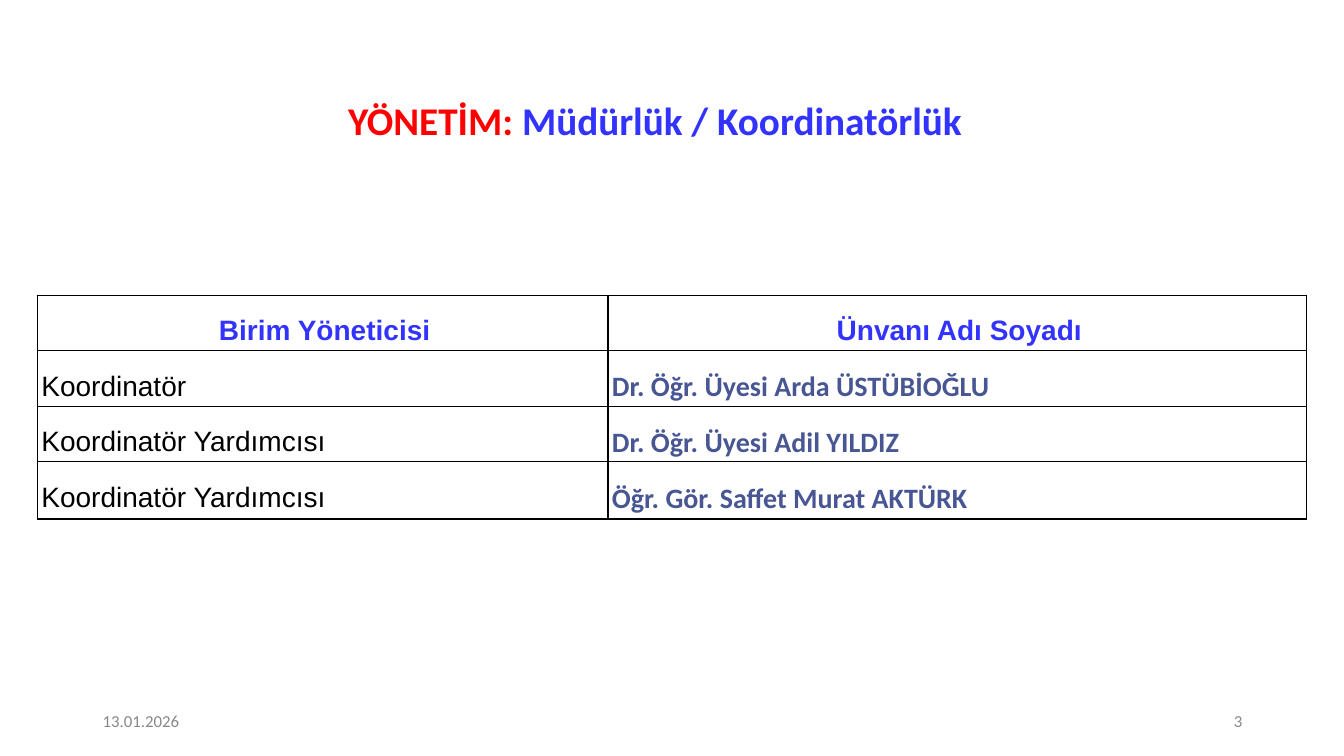
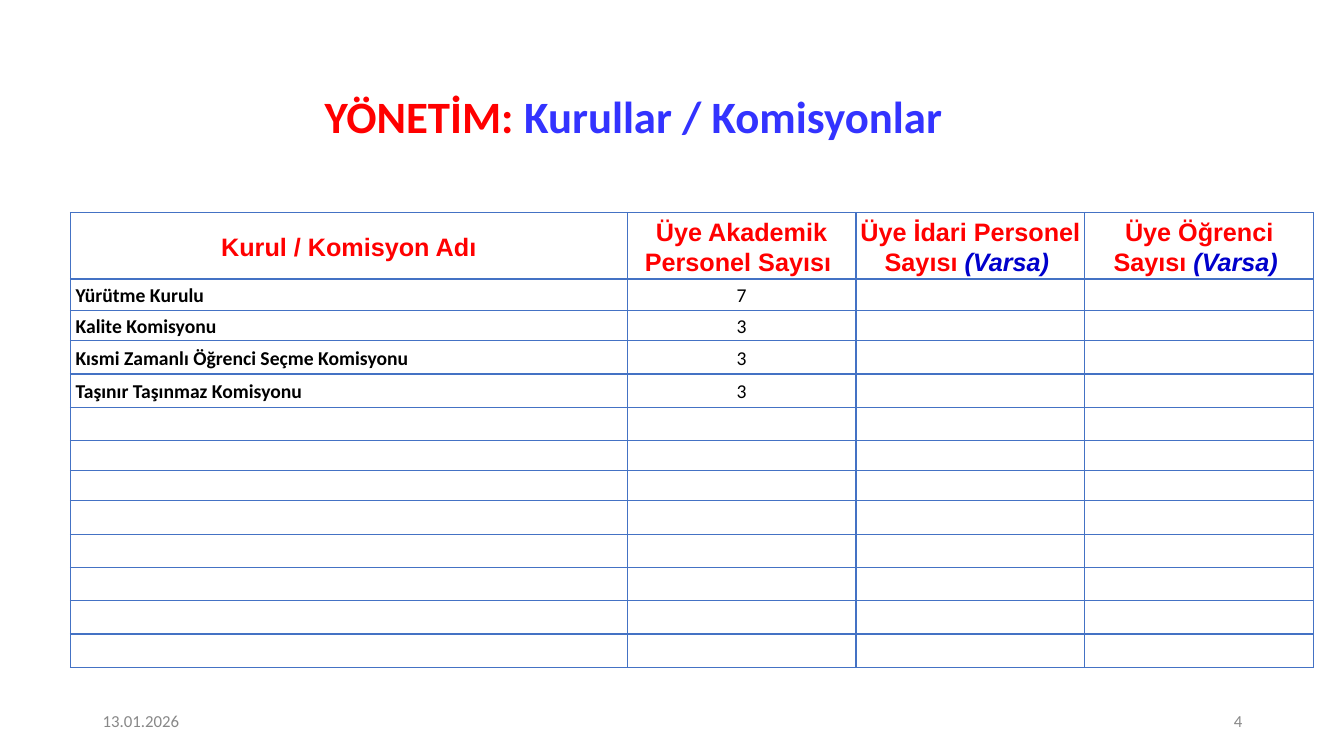
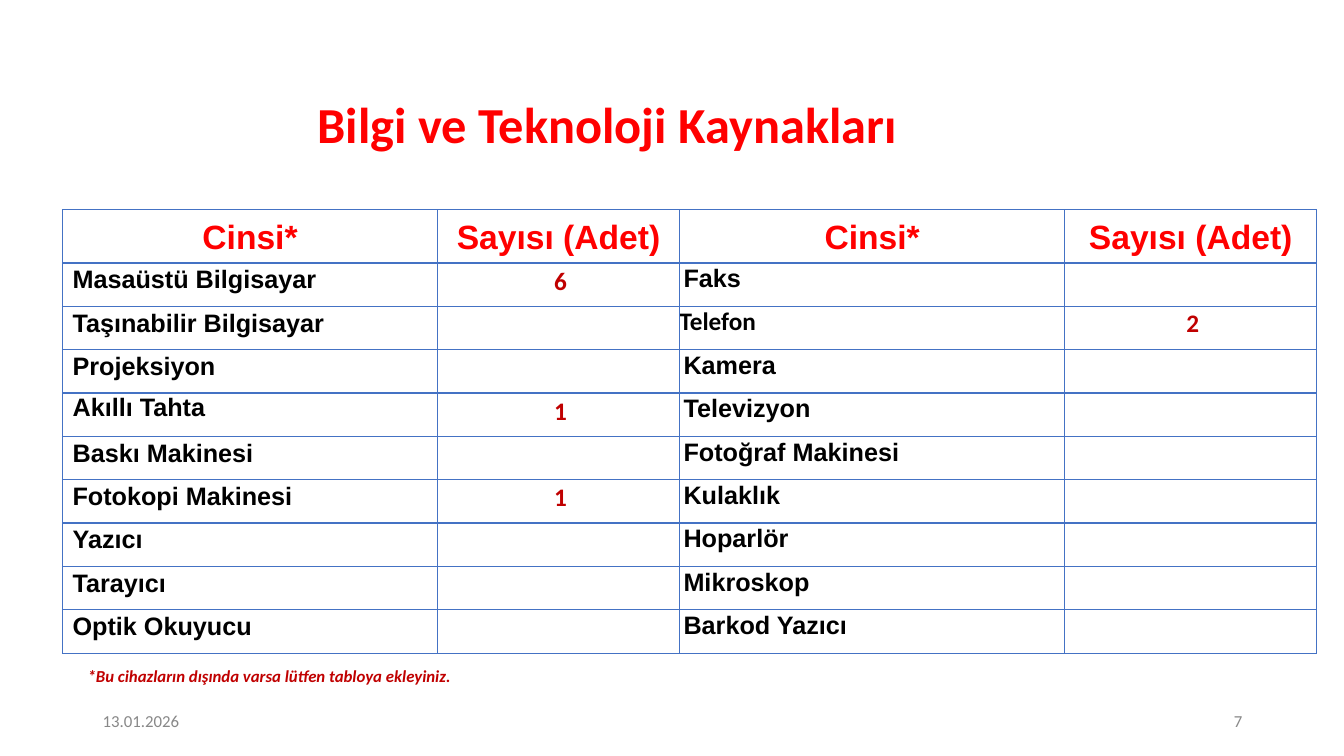
from itertools import product

from lxml import etree
from pptx import Presentation
from pptx.dml.color import RGBColor
from pptx.enum import text
from pptx.oxml import ns
from pptx.util import Emu, Pt

PX = 9144
COLOURS = {
    "red": "FF0000", "blue": "3333FF", "navy": "0000CC", "slate": "485793",
    "black": "000000", "grey": "888888", "crimson": "C00000", "line": "4472C4",
}
ALIGN = {"left": text.PP_ALIGN.LEFT, "center": text.PP_ALIGN.CENTER, "right": text.PP_ALIGN.RIGHT}
MIDDLE, TOP = text.MSO_ANCHOR.MIDDLE, text.MSO_ANCHOR.TOP
DATE = "13.01.2026"


def style(size, colour, font="Calibri", bold=False, italic=False, align="left",
          spacing=1.0, anchor=MIDDLE, inset=(10, 5, 10, 5)):
    return dict(size=size, colour=colour, font=font, bold=bold, italic=italic,
                align=align, spacing=spacing, anchor=anchor, inset=inset)


class Deck:
    def __init__(self, width, height):
        self.file = Presentation()
        self.file.slide_width, self.file.slide_height = Emu(width * PX), Emu(height * PX)
        self.page = None

    def add_page(self, number, title, size, place):
        self.page = self.file.slides.add_slide(self.file.slide_layouts[5])
        box = self.page.shapes.title
        box.left, box.top, box.width, box.height = (Emu(length * PX) for length in place)
        self.fill_frame(box.text_frame, title,
                        style(size, "red", bold=True, align="center", spacing=0.9))
        self.add_text(DATE, (92, 695, 300, 40), style(12, "grey"))
        self.add_text(str(number), (942, 695, 300, 40), style(12, "grey", align="right"))

    def add_text(self, words, place, look):
        box = self.page.shapes.add_textbox(*(Emu(length * PX) for length in place))
        self.fill_frame(box.text_frame, words, look)

    def fill_frame(self, frame, words, look):
        frame.word_wrap = True
        frame.auto_size = text.MSO_AUTO_SIZE.NONE
        frame.vertical_anchor = look["anchor"]
        self.set_margins(frame, look)
        self.set_words(frame.paragraphs[0], words, look)

    def set_margins(self, holder, look):
        for side, length in zip(("left", "top", "right", "bottom"), look["inset"]):
            setattr(holder, f"margin_{side}", Emu(length * PX))

    def set_words(self, para, words, look):
        para.alignment = ALIGN[look["align"]]
        para.line_spacing = look["spacing"]
        para.font.name = look["font"]
        para.font.size = Pt(look["size"])
        para.font.bold = look["bold"]
        para.font.italic = look["italic"]
        para.font.color.rgb = RGBColor.from_string(COLOURS[look["colour"]])
        spans = [(words, {})] if isinstance(words, str) else words
        for content, change in spans:
            span = para.add_run()
            span.text = content
            if "colour" in change:
                span.font.color.rgb = RGBColor.from_string(COLOURS[change["colour"]])
            if "italic" in change:
                span.font.italic = change["italic"]

    def add_table(self, left, top, columns, rows, cells, look_of, line, header_line=1):
        frame = self.page.shapes.add_table(
            len(rows), len(columns), *(Emu(length * PX) for length in
                                       (left, top, sum(columns), sum(rows))))
        table = frame.table
        table.first_row = table.horz_banding = False
        for column, width in zip(table.columns, columns):
            column.width = Emu(width * PX)
        for row, height in zip(table.rows, rows):
            row.height = Emu(height * PX)
        for r, c in product(range(len(rows)), range(len(columns))):
            cell, words, look = table.cell(r, c), cells[r][c], look_of(r, c)
            cell.fill.background()
            cell.vertical_anchor = look["anchor"]
            self.set_margins(cell, look)
            self.add_borders(cell, line, top=header_line if r == 1 else 1,
                             bottom=header_line if r == 0 else 1)
            para = cell.text_frame.paragraphs[0]
            if words:
                self.set_words(para, words, look)
            else:
                etree.SubElement(para._p, ns.qn("a:endParaRPr"), sz="1000")

    def add_borders(self, cell, colour, top, bottom):
        properties = cell._tc.get_or_add_tcPr()
        widths = {"lnL": 1, "lnR": 1, "lnT": top, "lnB": bottom}
        for index, (side, width) in enumerate(widths.items()):
            border = etree.Element(ns.qn(f"a:{side}"), w=str(int(Pt(width))))
            fill = etree.SubElement(border, ns.qn("a:solidFill"))
            etree.SubElement(fill, ns.qn("a:srgbClr"), val=COLOURS[colour])
            properties.insert(index, border)


def add_managers(deck):
    deck.add_page(3, [("YÖNETİM: ", {}), ("Müdürlük / Koordinatörlük", {"colour": "blue"})],
                  28, (114, 84, 1071, 76))
    common = dict(spacing=1.5, inset=(4, 0, 0, 0))
    header = style(20, "blue", "Arial", bold=True, align="center", **common)
    body = (style(20, "black", "Arial", **common), style(20, "slate", bold=True, **common))
    cells = [
        ("Birim Yöneticisi", "Ünvanı Adı Soyadı"),
        ("Koordinatör", "Dr. Öğr. Üyesi Arda ÜSTÜBİOĞLU"),
        ("Koordinatör Yardımcısı", "Dr. Öğr. Üyesi Adil YILDIZ"),
        ("Koordinatör Yardımcısı", "Öğr. Gör. Saffet Murat AKTÜRK"),
    ]
    deck.add_table(37, 293, [566, 693], [55, 55, 55, 57], cells,
                   lambda r, c: body[c] if r else header, "black")


def add_boards(deck):
    deck.add_page(4, [("YÖNETİM: ", {}), ("Kurullar / Komisyonlar", {"colour": "blue"})],
                  32, (70, 78, 1117, 80))
    optional = ("(Varsa) ", {"colour": "navy", "italic": True})
    boards = [("Yürütme Kurulu", "7"), ("Kalite Komisyonu", "3"),
              ("Kısmi Zamanlı Öğrenci Seçme Komisyonu", "3"), ("Taşınır Taşınmaz Komisyonu", "3")]
    cells = [("Kurul / Komisyon Adı", "Üye Akademik Personel Sayısı ",
              [("Üye İdari Personel Sayısı ", {}), optional],
              [("Üye Öğrenci Sayısı ", {}), optional])]
    cells += [(name, count, "", "") for name, count in boards]
    cells += [("",) * 4] * 8

    def look_of(r, c):
        inset = (1, 1, 1, 0) if c else (5, 1, 5, 0)
        if r == 0:
            return style(18, "red", "Arial", bold=True, align="center", spacing=1.07, inset=inset)
        return style(14, "black", bold=c == 0, align="center" if c else "left",
                     spacing=1.07, inset=inset)

    rows = [66, 31, 30, 33, 33, 33, 30, 30] + [33] * 5
    deck.add_table(70, 211, [552, 227, 227, 227], rows, cells, look_of, "line", header_line=2)


def add_devices(deck):
    deck.add_page(7, "Bilgi ve Teknoloji Kaynakları", 36, (29, 85, 1147, 83))
    cells = [
        ("Cinsi*", "Sayısı (Adet)") * 2,
        ("Masaüstü Bilgisayar", "6", "Faks", ""),
        ("Taşınabilir Bilgisayar", "", "Telefon", "2"),
        ("Projeksiyon", "", "Kamera", ""),
        ("Akıllı Tahta", "1", "Televizyon", ""),
        ("Baskı Makinesi", "", "Fotoğraf Makinesi", ""),
        ("Fotokopi Makinesi", "1", "Kulaklık", ""),
        ("Yazıcı", "", "Hoparlör", ""),
        ("Tarayıcı", "", "Mikroskop", ""),
        ("Optik Okuyucu", "", "Barkod Yazıcı", ""),
    ]

    def look_of(r, c):
        left, top, right = (6, 1, 6) if c < 2 else (0, 0, 0)
        if r == 0:
            return style(24, "red", "Arial", bold=True, align="center", spacing=1.07,
                         inset=(left, top, right, 0))
        common = dict(bold=True, anchor=TOP)
        if cells[r][c] == "Telefon":
            return style(18, "black", inset=(0, 0, 0, 0), **common)
        common["inset"] = (left + 4, top, right, 0)
        if c % 2:
            return style(18, "crimson", align="center", spacing=1.07, **common)
        spacing = 1.0 if cells[r][c] == "Akıllı Tahta" else 1.07
        return style(18, "black", "Arial", spacing=spacing, **common)

    deck.add_table(62, 208, [372, 240, 382, 250], [53] + [43] * 9, cells, look_of,
                   "line", header_line=2)
    deck.add_text("*Bu cihazların dışında varsa lütfen tabloya ekleyiniz.", (77, 656, 500, 30),
                  style(12, "crimson", bold=True, italic=True, anchor=TOP))


def main():
    deck = Deck(1333, 750)
    add_managers(deck)
    add_boards(deck)
    add_devices(deck)
    deck.file.save("out.pptx")


if __name__ == "__main__":
    main()
